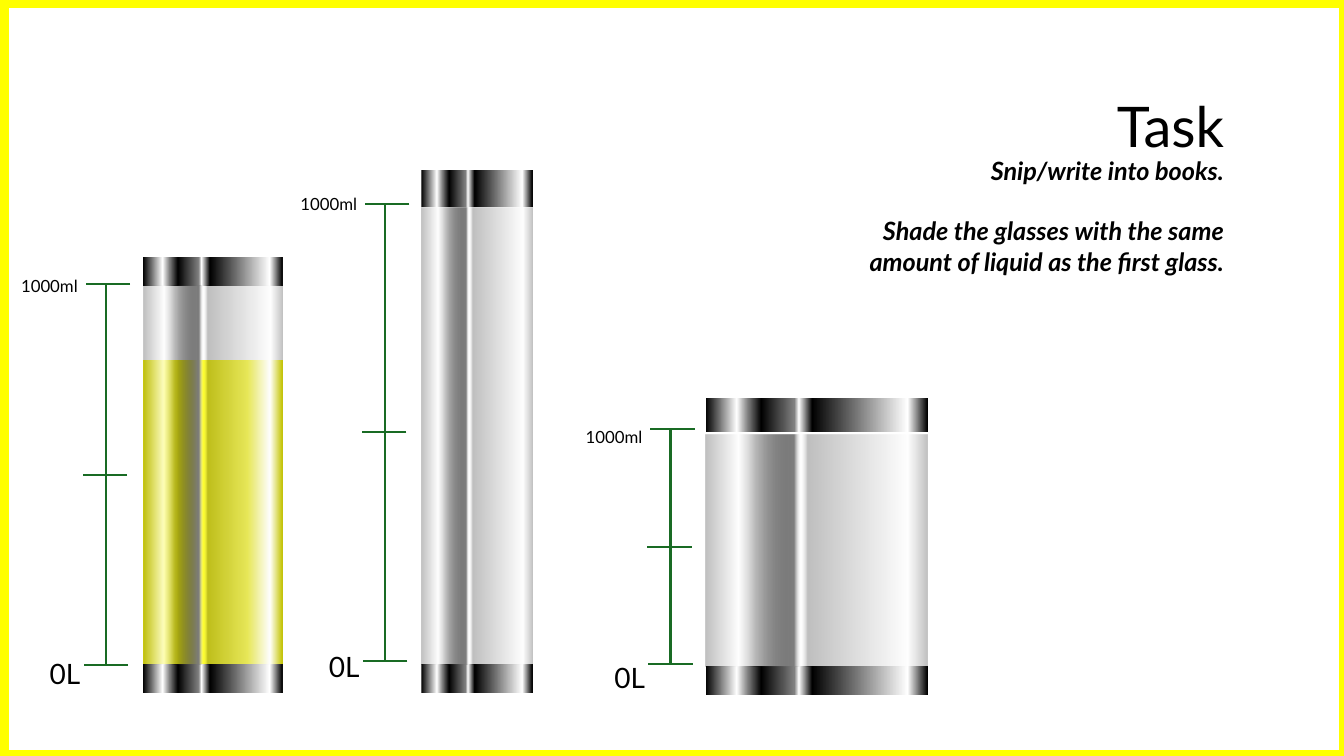
from dataclasses import dataclass

from lxml.etree import SubElement
from pptx import Presentation
from pptx.dml.color import RGBColor
from pptx.enum.shapes import MSO_CONNECTOR as Link, MSO_SHAPE as Shape
from pptx.enum.text import MSO_ANCHOR as Anchor, MSO_AUTO_SIZE as Fit, PP_ALIGN as Align
from pptx.oxml.ns import qn
from pptx.util import Inches, Pt


@dataclass(frozen=True)
class Theme:
    font: str = "Lato"
    ink: str = "000000"
    frame: str = "FFFF00"
    scale: str = "196B24"
    title: int = 40
    zero: int = 20
    body: int = 18
    full: int = 12
    metal: tuple = ((0, "000000"), (14, "FFFFFF"), (19, "808080"), (25, "000000"),
                    (40, "808080"), (42, "FFFFFF"), (48, "000000"),
                    (91, "FFFFFF"), (100, "000000"))
    liquid: tuple = ((0, "FFFF11"), (14, "FFFFA3"), (25, "FFFF11"), (75, "FFFF3F"),
                     (91, "FFFFFF"), (100, "FFFF00"))
    glass: tuple = ((0, "000000", 25), (15, "FFFFFF", 25), (19, "808080", 25),
                    (22, "000000", 25), (40, "808080"), (43, "FFFFFF", 5),
                    (46, "000000", 25), (91, "FFFFFF", 25), (100, "000000", 25))


@dataclass(frozen=True)
class Glass:
    left: float
    width: float
    rim_top: float
    rim_height: float
    top: float
    base: float
    axis: float
    full_mark: float
    zero_mark: float
    full_lift: float
    zero_lift: float
    level: float = 0


THEME = Theme()
BASE_HEIGHT = 0.29
GLASSES = (
    Glass(1.42, 1.38, 2.55, 0.29, 2.83, 6.59, 1.05, 2.82, 6.6, 0.13, 0.14, level=3.57),
    Glass(4.18, 1.1, 1.69, 0.36, 2.06, 6.59, 3.82, 2.02, 6.56, 0.15, 0.17),
    Glass(7, 2.2, 3.95, 0.34, 4.31, 6.61, 6.65, 4.26, 6.59, 0.08, 0.09),
)


def place(shape, left, top, width, height):
    shape.left, shape.top = Inches(left), Inches(top)
    shape.width, shape.height = Inches(width), Inches(height)


def write(box, lines, size, align, bold=False, italic=False, wrap=True, gaps=None):
    frame = box.text_frame
    frame.word_wrap = wrap
    frame.auto_size = Fit.NONE
    frame.vertical_anchor = Anchor.TOP
    for index, line in enumerate(lines):
        para = frame.paragraphs[0] if index == 0 else frame.add_paragraph()
        properties = para._p.get_or_add_pPr()
        properties.set("marL", "0")
        properties.set("indent", "0")
        SubElement(properties, qn("a:buNone"))
        para.alignment = align
        para.line_spacing = 1.0
        para.space_before = Pt((gaps or {}).get(index, 0))
        span = para.add_run()
        span.text = line
        span.font.name = THEME.font
        span.font.size = Pt(size)
        span.font.bold = bold
        span.font.italic = italic
        span.font.color.rgb = RGBColor.from_string(THEME.ink)


def add_gradient_box(page, left, top, width, height, stops):
    box = page.shapes.add_shape(Shape.RECTANGLE, 0, 0, 0, 0)
    place(box, left, top, width, height)
    box.shadow.inherit = False
    box.line.fill.background()
    box.fill.gradient()
    box.fill.gradient_angle = 0
    stop_list = box._element.spPr.find(qn("a:gradFill")).find(qn("a:gsLst"))
    for old in list(stop_list):
        stop_list.remove(old)
    for position, color, *opacity in stops:
        stop = SubElement(stop_list, qn("a:gs"), pos=str(position * 1000))
        tone = SubElement(stop, qn("a:srgbClr"), val=color)
        if opacity:
            SubElement(tone, qn("a:alpha"), val=str(opacity[0] * 1000))


def add_line(group, x1, y1, x2, y2):
    line = group.shapes.add_connector(
        Link.STRAIGHT, Inches(x1), Inches(y1), Inches(x2), Inches(y2))
    line.line.color.rgb = RGBColor.from_string(THEME.scale)
    line.line.width = Pt(1.5)
    SubElement(line._element.spPr, qn("a:effectLst"))


def add_label(group, text, left, top, width, height, size):
    box = group.shapes.add_textbox(
        Inches(left), Inches(top), Inches(width), Inches(height))
    write(box, [text], size, Align.CENTER)


def add_scale(page, glass):
    group = page.shapes.add_group_shape()
    axis, top, bottom = glass.axis, glass.full_mark, glass.zero_mark
    add_label(group, "0L", axis - 0.7, bottom - glass.zero_lift, 0.59, 0.41, THEME.zero)
    add_line(group, axis, top, axis, bottom)
    for mark, shift in ((top, 0.02), (bottom, 0), ((top + bottom) / 2, -0.01)):
        add_line(group, axis + shift + 0.22, mark, axis + shift - 0.22, mark)
    add_label(group, "1000ml", axis - 0.95, top - glass.full_lift, 0.78, 0.3, THEME.full)


def add_glass(page, glass):
    left, width = glass.left, glass.width
    if glass.level:
        add_gradient_box(page, left, glass.level, width, glass.base - glass.level,
                         THEME.liquid)
    for top, height in ((glass.rim_top, glass.rim_height), (glass.base, BASE_HEIGHT)):
        add_gradient_box(page, left, top, width, height, THEME.metal)
    add_gradient_box(page, left, glass.top, width, glass.base - glass.top, THEME.glass)
    add_scale(page, glass)


def add_task(page, left, top, width):
    title, body = page.shapes.title, page.placeholders[1]
    place(title, left + width - 1.27, top, 1.27, 0.77)
    write(title, ["Task"], THEME.title, Align.RIGHT, wrap=False)
    place(body, left, top + 0.63, width, 1.31)
    lines = ["Snip/write into books.", "Shade the glasses with the same",
             "amount of liquid as the first glass."]
    write(body, lines, THEME.body, Align.RIGHT, bold=True, italic=True, wrap=False,
          gaps={1: 21.6})


def add_frame(page, left, top, width, height):
    frame = page.shapes.add_shape(Shape.RECTANGLE, 0, 0, 0, 0)
    place(frame, left, top, width, height)
    frame.shadow.inherit = False
    frame.fill.background()
    frame.line.color.rgb = RGBColor.from_string(THEME.frame)
    frame.line.width = Pt(10)


def main():
    deck = Presentation()
    deck.slide_width, deck.slide_height = Inches(13.33), Inches(7.5)
    page = deck.slides.add_slide(deck.slide_layouts[1])
    add_task(page, 8.19, 0.86, 4.05)
    add_frame(page, 0.02, 0.01, 13.33, 7.5)
    for glass in GLASSES:
        add_glass(page, glass)
    deck.save("out.pptx")


if __name__ == "__main__":
    main()
